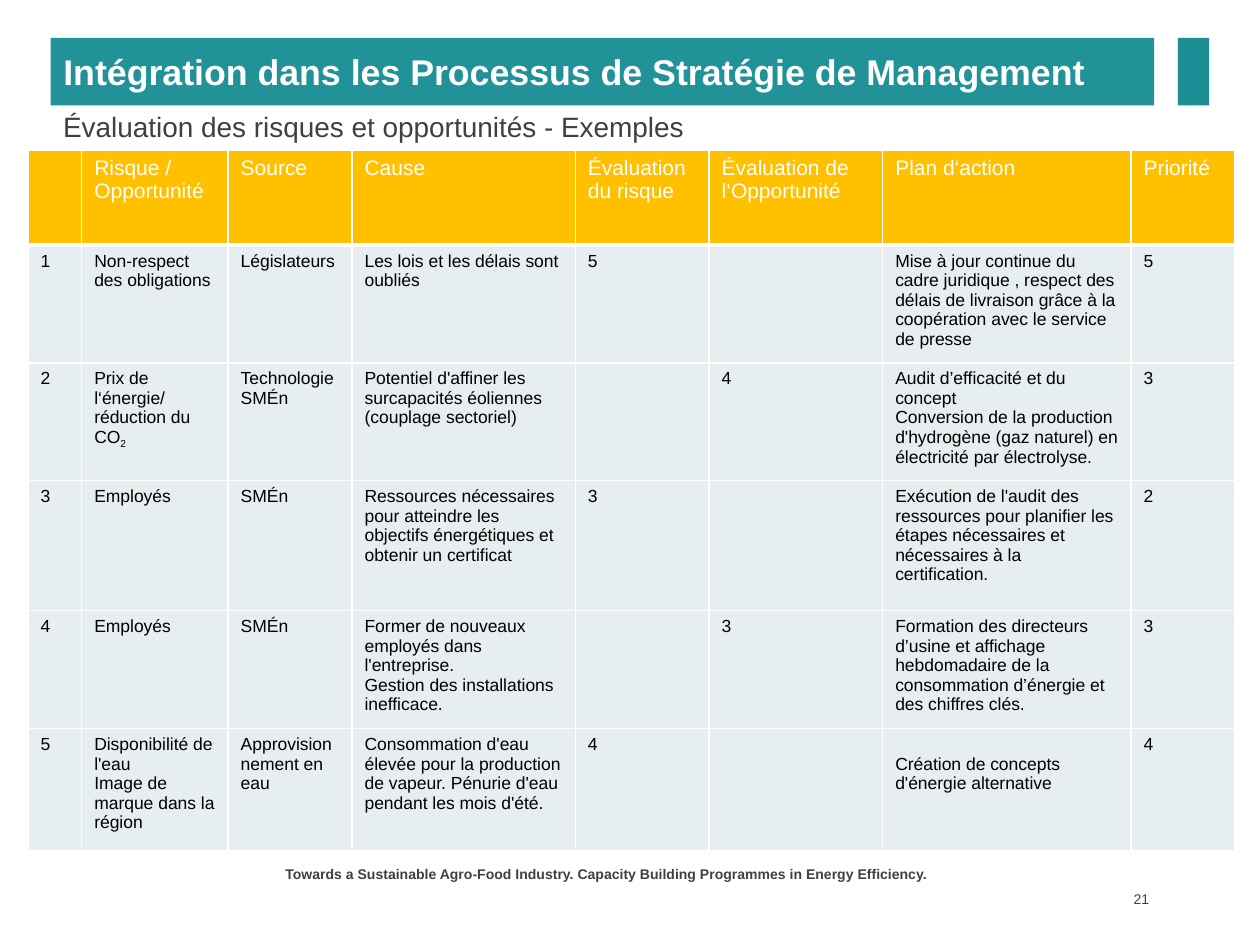
from typing import NamedTuple

from lxml import etree
from pptx import Presentation
from pptx.dml.color import RGBColor
from pptx.enum.shapes import MSO_SHAPE
from pptx.enum.text import MSO_ANCHOR, PP_ALIGN
from pptx.oxml.ns import qn
from pptx.util import Pt

RECT = MSO_SHAPE.RECTANGLE
MID, TOP = MSO_ANCHOR.MIDDLE, MSO_ANCHOR.TOP
LEFT, RIGHT = PP_ALIGN.LEFT, PP_ALIGN.RIGHT
HEX = {
    "teal": "209298", "accent": "1B8E95", "gold": "FFC000",
    "pale": "E7EEEF", "white": "FFFFFF", "black": "000000", "grey": "404040",
}
WIDTHS = (30.7, 83.7, 70.8, 127.6, 76.5, 99.2, 141.9, 59.5)
HEAD_H = 54.3
SUB = "~"


class Box(NamedTuple):
    x: float
    y: float
    w: float
    h: float


class Risk(NamedTuple):
    no: str
    name: str
    source: str
    cause: str
    risk: str
    chance: str
    plan: str
    rank: str


HEADS = Risk("", "Risque / Opportunité", "Source", "Cause", "Évaluation du risque",
             "Évaluation de l‘Opportunité", "Plan d‘action", "Priorité")
RISKS = {
    Risk("1", "Non-respect des obligations", "Législateurs",
         "Les lois et les délais sont oubliés", "5", "",
         "Mise à jour continue du cadre juridique , respect des délais de livraison "
         "grâce à la coopération avec le service de presse", "5"): 62.7,
    Risk("2", "Prix de l‘énergie/ réduction du CO~2", "Technologie SMÉn",
         "Potentiel d'affiner les surcapacités éoliennes (couplage sectoriel)", "", "4",
         "Audit d’efficacité et du concept\nConversion de la production d'hydrogène "
         "(gaz naturel) en électricité par électrolyse.", "3"): 63,
    Risk("3", "Employés", "SMÉn",
         "Ressources nécessaires pour atteindre les objectifs énergétiques et obtenir "
         "un certificat", "3", "",
         "Exécution de l'audit des ressources pour planifier les étapes nécessaires et "
         "nécessaires à la certification.", "2"): 74.3,
    Risk("4", "Employés", "SMÉn",
         "Former de nouveaux employés dans l'entreprise.\n"
         "Gestion des installations inefficace.", "", "3",
         "Formation des directeurs d’usine et affichage hebdomadaire de la "
         "consommation d’énergie et des chiffres clés.", "3"): 64.6,
    Risk("5", "Disponibilité de l'eau\nImage de marque dans la région",
         "Approvisionnement en eau",
         "Consommation d'eau élevée pour la production de vapeur. Pénurie d'eau "
         "pendant les mois d'été.", "4", "",
         "Création de concepts d'énergie alternative", "4"): 69.7,
}


def rgb(name: str) -> RGBColor:
    return RGBColor.from_string(HEX[name])


def write(frame, text: str, size: float = 10, color: str = "black",
          bold: bool = False, align=LEFT) -> None:
    frame.word_wrap = True
    for i, line in enumerate(text.split("\n")):
        para = frame.add_paragraph() if i else frame.paragraphs[0]
        para.alignment = align
        for j, part in enumerate(line.split(SUB)):
            run = para.add_run()
            run.text = part
            font = run.font
            font.name, font.size, font.bold = "Arial", Pt(size), bold
            font.color.rgb = rgb(color)
            if j:
                run._r.get_or_add_rPr().set("baseline", "-25000")


def place(shape, box: Box) -> None:
    shape.left, shape.top, shape.width, shape.height = (Pt(v) for v in box)


def paint(shape, color: str) -> None:
    shape.fill.solid()
    shape.fill.fore_color.rgb = rgb(color)
    shape.line.fill.background()


def label(slide, box: Box, text: str, anchor=TOP, inset: float = 7.2, **form) -> None:
    frame = slide.shapes.add_textbox(*(Pt(v) for v in box)).text_frame
    frame.vertical_anchor = anchor
    frame.margin_right = Pt(inset)
    write(frame, text, **form)


def edge(cell, base: float) -> None:
    props = cell._tc.get_or_add_tcPr()
    sides = {"lnL": 1, "lnR": 1, "lnT": 1, "lnB": base}
    for i, (tag, width) in enumerate(sides.items()):
        line = etree.Element(qn(f"a:{tag}"), w=str(Pt(width)))
        fill = etree.SubElement(line, qn("a:solidFill"))
        etree.SubElement(fill, qn("a:srgbClr"), val=HEX["white"])
        props.insert(i, line)


def fill_row(row, texts: Risk, high: float, back: str, base: float = 1, **form) -> None:
    row.height = Pt(high)
    for cell, text in zip(row.cells, texts):
        cell.fill.solid()
        cell.fill.fore_color.rgb = rgb(back)
        edge(cell, base)
        if text:
            write(cell.text_frame, text, **form)


def add_grid(slide, x: float, y: float):
    high = HEAD_H + sum(RISKS.values())
    box = Box(x, y, sum(WIDTHS), high)
    grid = slide.shapes.add_table(
        len(RISKS) + 1, len(WIDTHS), *(Pt(v) for v in box)).table
    for col, width in zip(grid.columns, WIDTHS):
        col.width = Pt(width)
    rows = list(grid.rows)
    fill_row(rows[0], HEADS, HEAD_H, "gold", base=3, size=12, color="white")
    for row, (risk, tall) in zip(rows[1:], RISKS.items()):
        fill_row(row, risk, tall, "pale")
    return grid


def main() -> None:
    deck = Presentation()
    deck.slide_width, deck.slide_height = Pt(720), Pt(540)
    slide = deck.slides.add_slide(deck.slide_layouts[5])

    title = slide.shapes.title
    place(title, Box(29, 21.6, 630.5, 38.7))
    paint(title, "teal")
    title.text_frame.vertical_anchor = MID
    write(title.text_frame, "Intégration dans les Processus de Stratégie de Management",
          size=20.4, color="white", bold=True)

    block = slide.shapes.add_shape(RECT, 0, 0, 0, 0)
    place(block, Box(673, 21.6, 18, 38.7))
    block.shadow.inherit = False
    paint(block, "accent")

    label(slide, Box(29, 60.8, 662, 22.5),
          "Évaluation des risques et opportunités - Exemples",
          anchor=MID, size=16, color="grey")

    grid = add_grid(slide, 16, 85.7)
    grid.cell(5, 6).margin_top = Pt(14.8)

    label(slide, Box(156, 491, 396, 15),
          "Towards a Sustainable Agro-Food Industry. "
          "Capacity Building Programmes in Energy Efficiency.",
          size=8, color="grey", bold=True)
    label(slide, Box(619, 506.3, 40.5, 14.4), "21", anchor=MID, inset=2.9,
          size=8, color="grey", align=RIGHT)
    deck.save("out.pptx")


if __name__ == "__main__":
    main()
